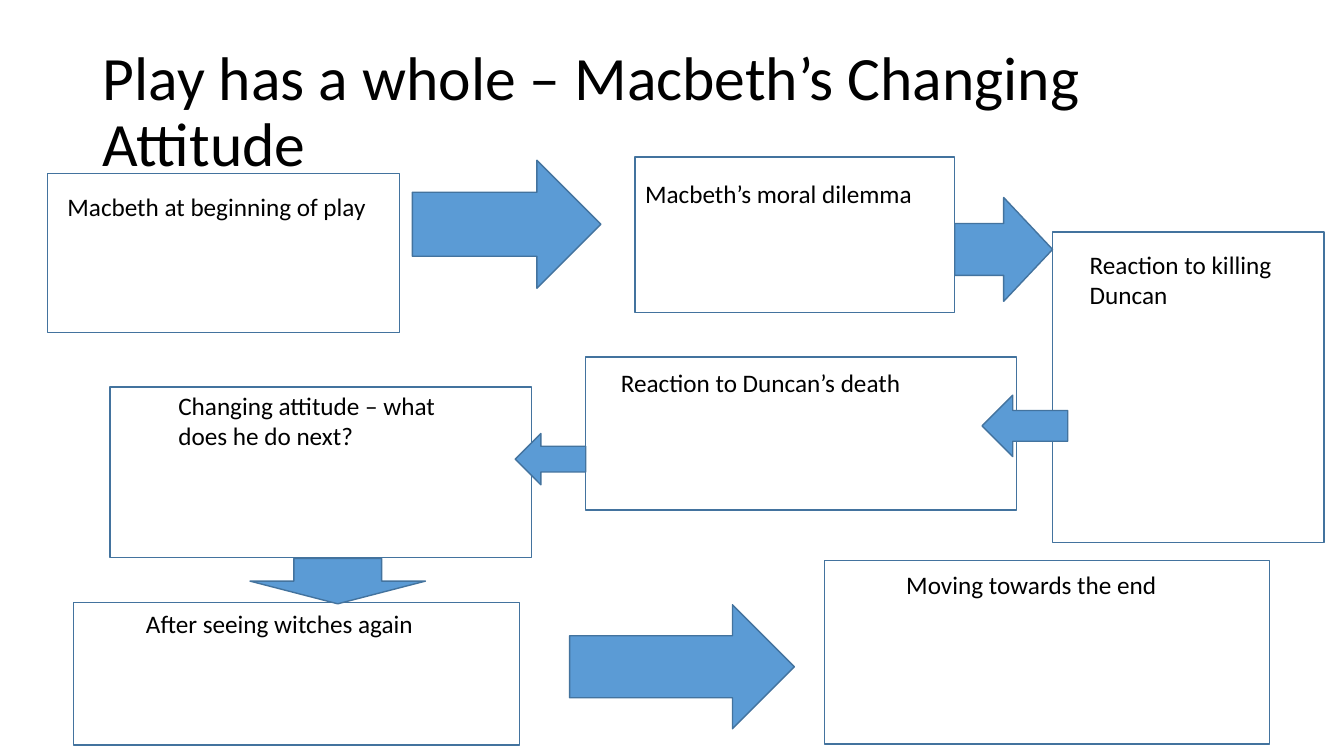
from dataclasses import dataclass

from pptx import Presentation
from pptx.dml.color import RGBColor
from pptx.enum.shapes import MSO_SHAPE
from pptx.enum.text import MSO_ANCHOR, MSO_AUTO_SIZE, PP_ALIGN
from pptx.util import Inches, Pt

RECTANGLE = MSO_SHAPE.RECTANGLE
RIGHT, LEFT, DOWN = MSO_SHAPE.RIGHT_ARROW, MSO_SHAPE.LEFT_ARROW, MSO_SHAPE.DOWN_ARROW
TITLE_ONLY = 5
CELL = Inches(0.1)  # square grid: 133.3 columns by 75 rows


@dataclass(frozen=True)
class Theme:
    font: str = "Calibri"
    text: RGBColor = RGBColor(0x00, 0x00, 0x00)
    arrow: RGBColor = RGBColor(0x5B, 0x9B, 0xD5)
    outline: RGBColor = RGBColor(0x43, 0x73, 0x9E)
    title_size: Pt = Pt(44)
    caption_size: Pt = Pt(18)
    line_width: Pt = Pt(1)


THEME = Theme()
TITLE = "Play has a whole – Macbeth’s Changing Attitude"
TITLE_BOX = (9.2, 4, 115, 14.5)

# Caption, box (left, top, width, height), caption offset and size inside the box
STAGES = [
    ("Macbeth at beginning of play", (4.7, 17.2, 34.9, 15.8), (1, 1.3, 36.5, 16.2)),
    ("Macbeth’s moral dilemma", (63, 15.6, 31.7, 15.4), (0, 1.6, 34.4, 10.1)),
    ("Reaction to killing Duncan", (104.4, 23, 26.9, 30.8), (2.7, 1.2, 21.7, 7.1)),
    ("Reaction to Duncan’s death", (58.1, 35.4, 42.7, 15.2), (2.5, 0.5, 38.1, 4)),
    ("Changing attitude – what does he do next?", (10.9, 38.4, 41.8, 16.9), (5.8, -0.2, 30.1, 7.1)),
    ("After seeing witches again", (7.3, 59.8, 44.2, 14.1), (6.2, 0.1, 31.7, 4)),
    ("Moving towards the end", (81.8, 55.6, 44.1, 18.2), (7.1, 0.4, 36.4, 4)),
]
ARROWS = [
    (RIGHT, (40.9, 15.9, 18.7, 12.7)),
    (RIGHT, (94.7, 19.6, 9.7, 10.3)),
    (LEFT, (97.4, 39.2, 8.5, 6.1)),
    (LEFT, (51.1, 43, 7, 5.1)),
    (DOWN, (24.8, 55.4, 17.4, 4.5)),
    (RIGHT, (56.5, 60, 22.3, 12.3)),
]


def cells(box):
    return [int(length * CELL) for length in box]


def style_text(para, size):
    para.alignment = PP_ALIGN.LEFT
    para.font.name = THEME.font
    para.font.size = size
    para.font.color.rgb = THEME.text


def add_title(page, box):
    title = page.shapes.title
    title.left, title.top, title.width, title.height = cells(box)
    frame = title.text_frame
    frame.text = TITLE
    frame.auto_size = MSO_AUTO_SIZE.NONE
    frame.vertical_anchor = MSO_ANCHOR.MIDDLE
    frame.paragraphs[0].line_spacing = 0.9
    style_text(frame.paragraphs[0], THEME.title_size)


def add_outlined(page, kind, box, fill=None):
    shape = page.shapes.add_shape(kind, *cells(box))
    shape.shadow.inherit = False
    if fill is None:
        shape.fill.background()
    else:
        shape.fill.solid()
        shape.fill.fore_color.rgb = fill
    shape.line.color.rgb = THEME.outline
    shape.line.width = THEME.line_width


def add_stage(page, caption, box, inner):
    """Draw an outlined writing area with its caption placed from the area's corner."""
    left, top = box[:2]
    across, down, width, height = inner
    label = page.shapes.add_textbox(*cells((left + across, top + down, width, height)))
    frame = label.text_frame
    frame.word_wrap = True
    frame.auto_size = MSO_AUTO_SIZE.SHAPE_TO_FIT_TEXT
    frame.text = caption
    style_text(frame.paragraphs[0], THEME.caption_size)
    add_outlined(page, RECTANGLE, box)


def main():
    deck = Presentation()
    deck.slide_width, deck.slide_height = Inches(13.33), Inches(7.5)
    page = deck.slides.add_slide(deck.slide_layouts[TITLE_ONLY])
    add_title(page, TITLE_BOX)
    for caption, box, inner in STAGES:
        add_stage(page, caption, box, inner)
    for kind, box in ARROWS:
        add_outlined(page, kind, box, THEME.arrow)
    deck.save("out.pptx")


if __name__ == "__main__":
    main()
